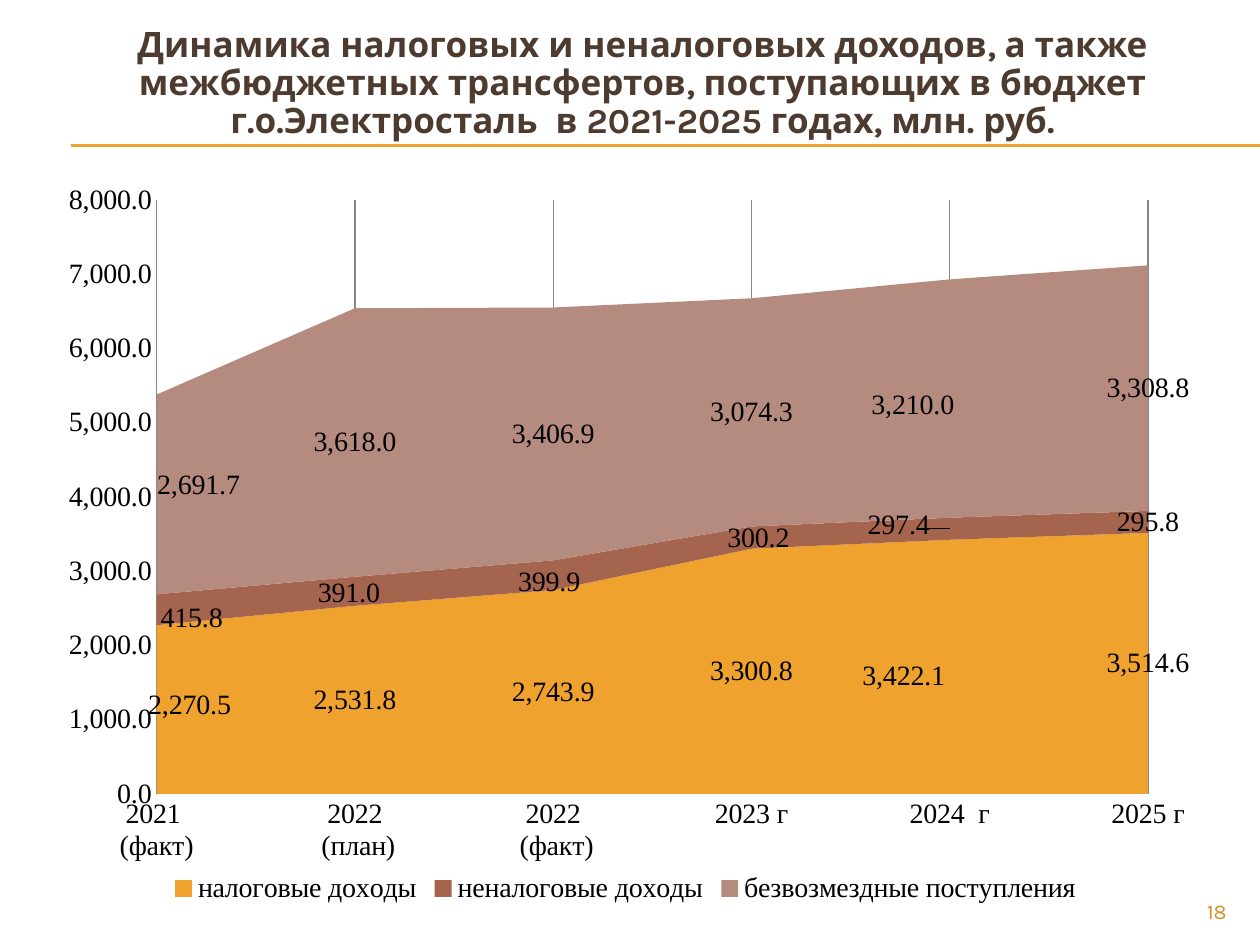
from dataclasses import dataclass

from lxml import etree
from pptx import Presentation, util as u
from pptx.chart.data import CategoryChartData
from pptx.dml.color import RGBColor
from pptx.enum import chart as ch, shapes, text
from pptx.oxml import parse_xml
from pptx.oxml.ns import nsdecls, qn

PX = 914400 // 126  # EMU in one px


@dataclass(frozen=True)
class Theme:
    title: str = "4E3B30"
    title_edge: str = "563928"
    rule: str = "F0A22E"
    number: str = "D48F29"
    chart_text: str = "000000"
    grid: str = "868686"
    heading_font: str = "Karla"
    chart_font: str = "Times New Roman"
    title_size: int = 20
    chart_size: int = 16
    number_size: int = 12


THEME = Theme()
NUMBER_FORMAT = "#,##0.0"
TITLE = ("Динамика налоговых и неналоговых доходов, а также межбюджетных "
         "трансфертов, поступающих в бюджет г.о.Электросталь  в 2021-2025 "
         "годах, млн. руб.")
YEARS = ["2021 \n(факт)", "2022\n (план)", "2022\n (факт)",
         "2023 г", "2024  г", "2025 г"]
# name, colour, values, label shifts in px by year index
INCOME = [
    ("налоговые доходы", "F0A22E",
     [2270.5, 2531.8, 2743.9, 3300.8, 3422.1, 3514.6],
     {0: (33, -4), 4: (-46, 10)}),
    ("неналоговые доходы", "A5644E",
     [415.8, 391.0, 399.9, 300.2, 297.4, 295.8],
     {0: (35, 8), 1: (-6, 2), 2: (-4, 7), 3: (7, 1), 4: (-51, -3)}),
    ("безвозмездные поступления", "B58B80",
     [2691.7, 3618.0, 3406.9, 3074.3, 3210.0, 3308.8],
     {0: (42, -9), 4: (-37, 7)}),
]
CHART_BOX = (15, 175, 1221, 735)
PLOT = {"x": 0.116, "y": 0.034, "w": 0.812, "h": 0.808}


def px(*lengths):
    return [u.Emu(length * PX) for length in lengths]


def rgb(value):
    return RGBColor.from_string(value)


def apply(target, **values):
    for name, value in values.items():
        setattr(target, name, value)


def style_line(line, color, width=0.75):
    line.color.rgb = rgb(color)
    line.width = u.Pt(width)


def add_rule(slide, y):
    rule = slide.shapes.add_connector(
        shapes.MSO_CONNECTOR.STRAIGHT, *px(71, y, 1260, y))
    style_line(rule.line, THEME.rule)
    etree.SubElement(rule._element.spPr, qn("a:effectLst"))


def add_text(slide, box, words, size, color, align, bold=False,
             anchor=text.MSO_ANCHOR.TOP, spacing=1.0):
    frame = slide.shapes.add_textbox(*px(*box)).text_frame
    apply(frame, word_wrap=True, vertical_anchor=anchor)
    line = frame.paragraphs[0]
    apply(line, alignment=align, line_spacing=spacing)
    run = line.add_run()
    run.text = words
    apply(run.font, name=THEME.heading_font, size=u.Pt(size), bold=bold)
    run.font.color.rgb = rgb(color)
    return run


def outline_text(run, color):
    run.font._element.insert(0, parse_xml(
        f'<a:ln {nsdecls("a")} w="12700"><a:solidFill>'
        f'<a:srgbClr val="{color}"/></a:solidFill></a:ln>'))


def layout_xml(parts, inner=False):
    target = '<c:layoutTarget val="inner"/>' if inner else ""
    modes = '<c:xMode val="edge"/><c:yMode val="edge"/>' if inner else ""
    sizes = "".join(f'<c:{k} val="{v}"/>' for k, v in parts.items())
    return (f'<c:layout {nsdecls("c")}><c:manualLayout>{target}{modes}{sizes}'
            '</c:manualLayout></c:layout>')


def shifted_label(index, dx, dy):
    shift = {"x": round(dx / CHART_BOX[2], 4), "y": round(dy / CHART_BOX[3], 4)}
    shown = "".join(
        f'<c:show{part} val="{int(part == "Val")}"/>' for part in
        ("LegendKey", "Val", "CatName", "SerName", "Percent", "BubbleSize"))
    return parse_xml(
        f'<c:dLbl {nsdecls("c")}><c:idx val="{index}"/>{layout_xml(shift)}'
        f'<c:numFmt formatCode="{NUMBER_FORMAT}" sourceLinked="0"/>{shown}'
        '</c:dLbl>')


def style_series(series, color, shifts):
    series.format.fill.solid()
    series.format.fill.fore_color.rgb = rgb(color)
    labels = series.data_labels
    apply(labels, show_value=True, number_format=NUMBER_FORMAT,
          number_format_is_linked=False)
    style_chart_font(labels.font)
    for place, (index, shift) in enumerate(shifts.items()):
        labels._element.insert(place, shifted_label(index, *shift))


def style_chart_font(font):
    apply(font, name=THEME.chart_font, size=u.Pt(THEME.chart_size), bold=False)
    font.color.rgb = rgb(THEME.chart_text)


def style_axes(chart):
    years, money = chart.category_axis, chart.value_axis
    for axis in (years, money):
        apply(axis, major_tick_mark=ch.XL_TICK_MARK.NONE,
              minor_tick_mark=ch.XL_TICK_MARK.NONE)
        style_line(axis.format.line, THEME.grid)
        style_chart_font(axis.tick_labels.font)
    years.has_major_gridlines = True
    style_line(years.major_gridlines.format.line, THEME.grid)
    apply(money, has_major_gridlines=False, minimum_scale=0,
          maximum_scale=8000, major_unit=1000)
    apply(money.tick_labels, number_format=NUMBER_FORMAT,
          number_format_is_linked=False)
    for crossing in money._element.findall(qn("c:crossBetween")):
        crossing.set("val", "midCat")


def add_income_chart(slide):
    data = CategoryChartData(number_format=NUMBER_FORMAT)
    data.categories = YEARS
    for name, _, values, _ in INCOME:
        data.add_series(name, values)
    chart = slide.shapes.add_chart(
        ch.XL_CHART_TYPE.AREA_STACKED, *px(*CHART_BOX), data).chart
    style_chart_font(chart.font)
    apply(chart, has_title=False, has_legend=True)
    apply(chart.legend, position=ch.XL_LEGEND_POSITION.BOTTOM,
          include_in_layout=False)
    style_chart_font(chart.legend.font)
    style_axes(chart)
    for series, (_, color, _, shifts) in zip(chart.plots[0].series, INCOME):
        style_series(series, color, shifts)

    # Fixed plot area
    plot_area = chart._chartSpace.chart.plotArea
    for old in plot_area.findall(qn("c:layout")):
        plot_area.remove(old)
    plot_area.insert(0, parse_xml(layout_xml(PLOT, inner=True)))


def main():
    deck = Presentation()
    apply(deck, slide_width=u.Inches(10), slide_height=u.Inches(7.5))
    slide = deck.slides.add_slide(deck.slide_layouts[6])

    # Double rule under the heading
    for y in (145, 146):
        add_rule(slide, y)

    # Heading and page number
    heading = add_text(slide, (44, 26, 1197, 116), TITLE, THEME.title_size,
                       THEME.title, text.PP_ALIGN.CENTER, bold=True,
                       anchor=text.MSO_ANCHOR.MIDDLE, spacing=0.9)
    outline_text(heading, THEME.title_edge)
    add_text(slide, (1134, 892, 105, 34), "18", THEME.number_size,
             THEME.number, text.PP_ALIGN.RIGHT)

    # Income by year
    add_income_chart(slide)
    deck.save("out.pptx")


if __name__ == "__main__":
    main()
